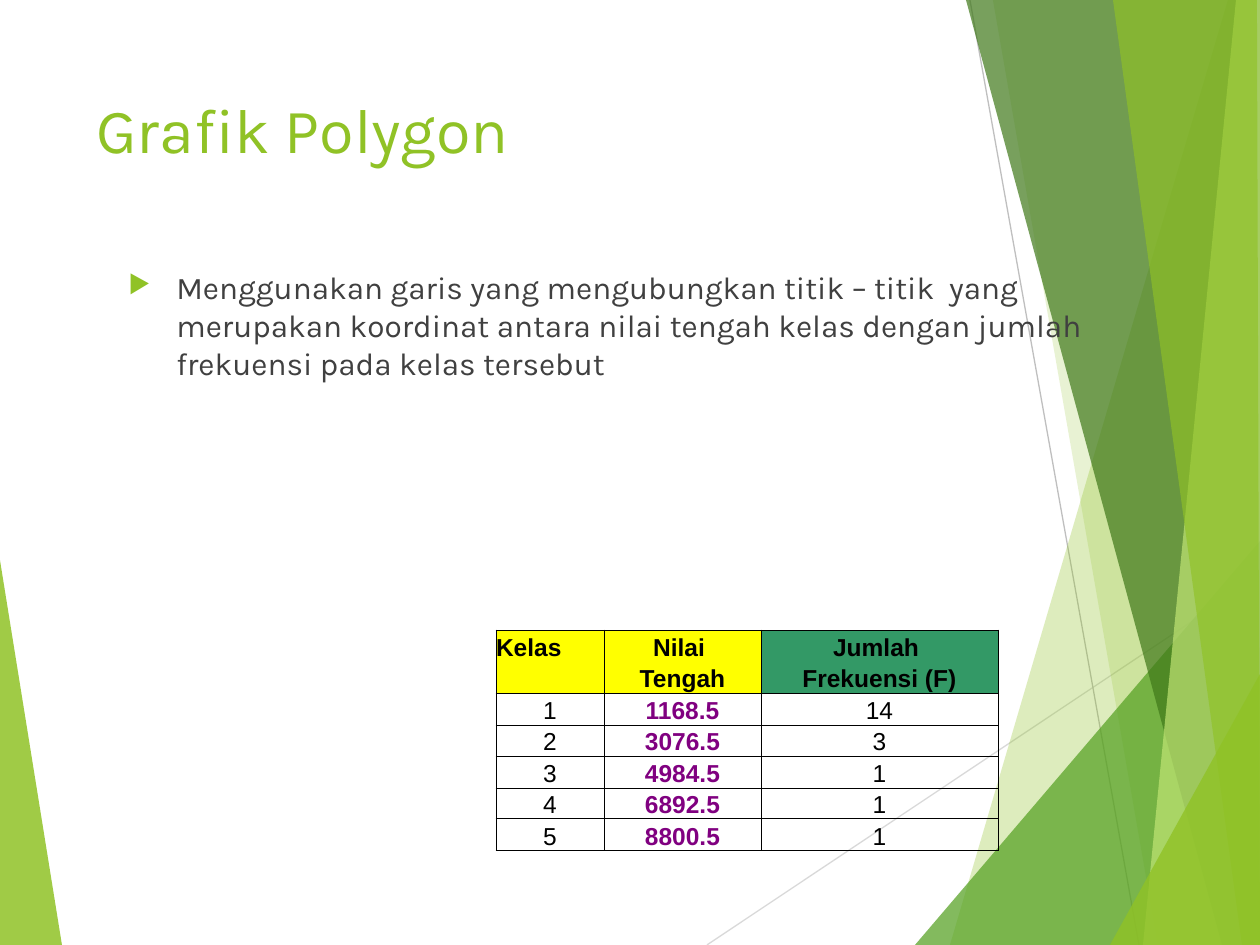
from dataclasses import dataclass
from lxml.etree import SubElement
from pptx import Presentation
from pptx.dml.color import RGBColor as RGB
from pptx.enum.shapes import MSO_CONNECTOR as CONN
from pptx.enum.text import MSO_ANCHOR as ANCHOR, PP_ALIGN as ALIGN
from pptx.oxml.ns import qn
from pptx.util import Pt

PX = 914400 // 126


@dataclass(frozen=True)
class Theme:
    font: str = "Karla"
    table_font: str = "Arial"
    title_size: int = 36
    body_size: int = 18
    table_size: int = 14
    green: str = "90C226"
    leaf: str = "54A021"
    forest: str = "3F7819"
    lime: str = "C0E474"
    body: str = "404040"
    black: str = "000000"
    purple: str = "800080"
    yellow: str = "FFFF00"
    teal: str = "339966"
    pale_line: str = "D9D9D9"
    gray_line: str = "BFBFBF"


T = Theme()


def add_run(p, text, font, size, color, bold=False):
    r = p.add_run()
    r.text = text
    r.font.name = font
    r.font.size = Pt(size)
    r.font.bold = bold
    r.font.color.rgb = RGB.from_string(color)


def add_box(s, x, y, w, h):
    tf = s.shapes.add_textbox(x * PX, y * PX, w * PX, h * PX).text_frame
    tf.word_wrap = True
    return tf.paragraphs[0]


prs = Presentation()
prs.slide_width, prs.slide_height = 1260 * PX, 945 * PX
s = prs.slides.add_slide(prs.slide_layouts[6])

lines = [
    ((707, 945), (1260, 576), T.pale_line),
    ((970, 0), (1139, 945), T.gray_line),
]
for (x1, y1), (x2, y2), color in lines:
    ln = s.shapes.add_connector(CONN.STRAIGHT, x1 * PX, y1 * PX, x2 * PX, y2 * PX)
    ln.line.color.rgb = RGB.from_string(color)
    ln.line.width = Pt(0.75)
    SubElement(ln._element.spPr, qn("a:effectLst"))

facets = [
    ([(0, 560), (62, 945), (0, 945)], T.green, 85),
    ([(1228, 0), (950, 945), (1260, 945), (1260, 0)], T.green, 30),
    ([(993, 0), (1158, 945), (1260, 945), (1260, 0)], T.green, 20),
    ([(915, 945), (1260, 541), (1260, 945)], T.leaf, 72),
    ([(966, 0), (1222, 945), (1260, 945), (1260, 0)], T.forest, 70),
    ([(1236, 0), (1143, 945), (1260, 945), (1260, 0)], T.lime, 70),
    ([(1113, 0), (1242, 945), (1260, 945), (1257, 0)], T.green, 65),
    ([(1110, 945), (1260, 674), (1260, 945)], T.green, 80),
]
for points, color, opacity in facets:
    fb = s.shapes.build_freeform(*points[0], scale=PX)
    fb.add_line_segments(points[1:], close=True)
    sp = fb.convert_to_shape()
    sp.shadow.inherit = False
    sp.line.fill.background()
    sp.fill.solid()
    sp.fill.fore_color.rgb = RGB.from_string(color)
    clr = sp._element.spPr.find(qn("a:solidFill"))[0]
    SubElement(clr, qn("a:alpha"), val=str(opacity * 1000))

p = add_box(s, 84, 84, 874, 181)
add_run(p, "Grafik Polygon", T.font, T.title_size, T.green)

p = add_box(s, 116, 262, 1071, 357)
pPr = p._p.get_or_add_pPr()
pPr.set("marL", str(48 * PX))
pPr.set("indent", str(-48 * PX))
SubElement(SubElement(pPr, qn("a:buClr")), qn("a:srgbClr"), val=T.green)
SubElement(pPr, qn("a:buSzPct"), val="80000")
SubElement(pPr, qn("a:buChar"), char="▶")
add_run(p, "Menggunakan garis yang mengubungkan titik – titik  yang merupakan koordinat "
        "antara nilai tengah kelas dengan jumlah frekuensi pada kelas tersebut",
        T.font, T.body_size, T.body)

rows = [
    ("Kelas", "Nilai ", "Jumlah "),
    ("", "Tengah", "Frekuensi (F)"),
    ("1", "1168.5", "14"),
    ("2", "3076.5", "3"),
    ("3", "4984.5", "1"),
    ("4", "6892.5", "1"),
    ("5", "8800.5", "1"),
]
widths = [108, 157, 237]
heights = [32 - i % 2 for i in range(len(rows))]
header_fills = [T.yellow, T.yellow, T.teal]
tbl = s.shapes.add_table(len(rows), len(widths), 496 * PX, 630 * PX,
                         sum(widths) * PX, sum(heights) * PX).table
tbl.first_row = tbl.horz_banding = False
for col, w in zip(tbl.columns, widths):
    col.width = w * PX
for i, (row, h) in enumerate(zip(rows, heights)):
    tbl.rows[i].height = h * PX
    header = i < 2
    for j, text in enumerate(row):
        c = tbl.cell(i, j)
        c.margin_left = c.margin_right = c.margin_top = c.margin_bottom = 0
        c.vertical_anchor = ANCHOR.BOTTOM
        for side in ("lnL", "lnR", "lnT", "lnB"):
            ln = SubElement(c._tc.get_or_add_tcPr(), qn("a:" + side), w=str(Pt(0.5)))
            if (i, side) in ((0, "lnB"), (1, "lnT")):
                SubElement(ln, qn("a:noFill"))
            else:
                SubElement(SubElement(ln, qn("a:solidFill")), qn("a:srgbClr"), val=T.black)
        if header:
            c.fill.solid()
            c.fill.fore_color.rgb = RGB.from_string(header_fills[j])
        else:
            c.fill.background()
        p = c.text_frame.paragraphs[0]
        p.alignment = ALIGN.LEFT if (i, j) == (0, 0) else ALIGN.CENTER
        if text:
            add_run(p, text, T.table_font, T.table_size,
                    T.purple if j == 1 and not header else T.black, header or j == 1)
        else:
            SubElement(p._p, qn("a:endParaRPr"), sz=str(T.table_size * 100))

prs.save("out.pptx")
